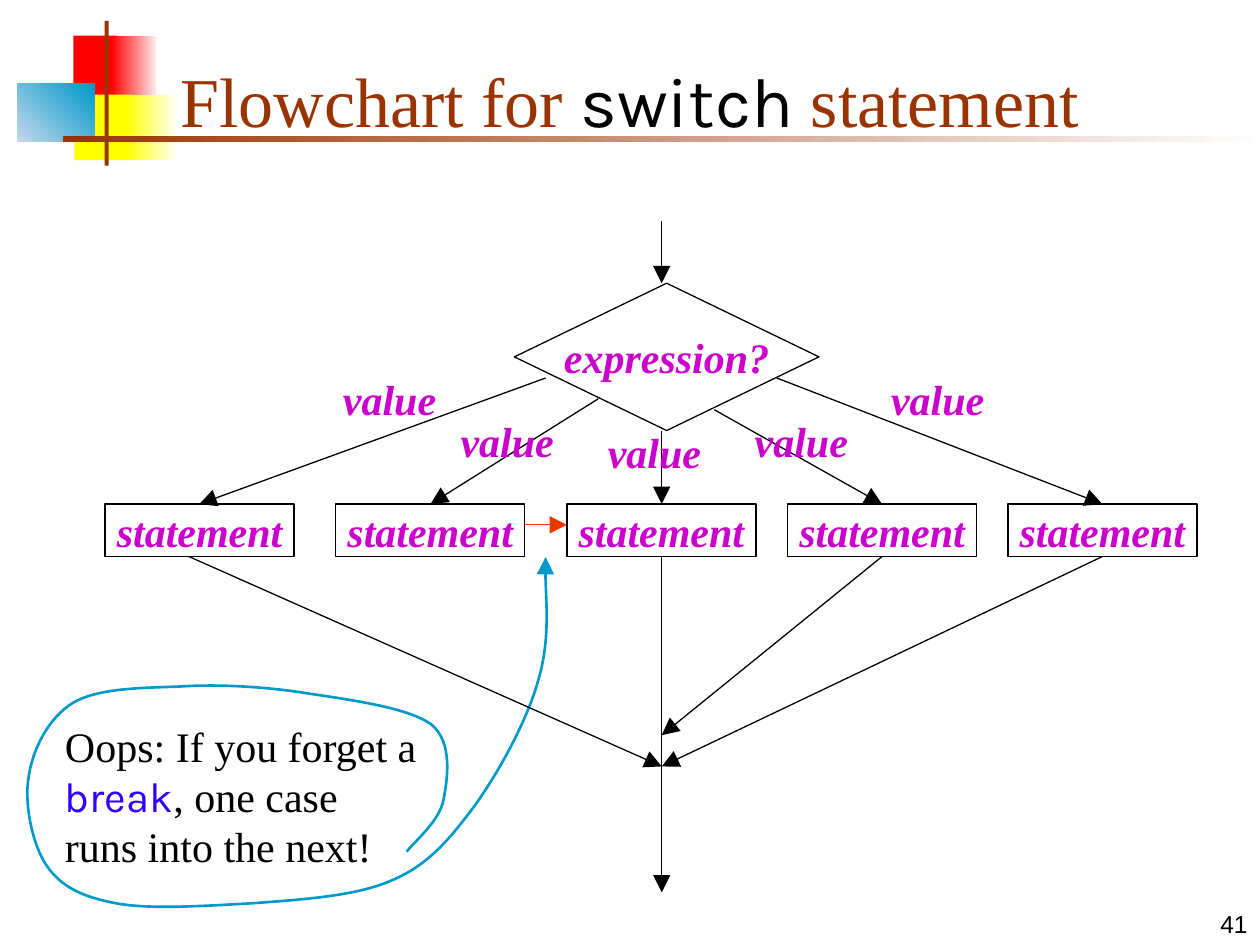
import dataclasses

import lxml.etree
import pptx
import pptx.dml.color
import pptx.enum.shapes
import pptx.enum.text
import pptx.oxml.ns
import pptx.util

Cm = pptx.util.Cm
Pt = pptx.util.Pt
RGB = pptx.dml.color.RGBColor.from_string
SHAPE = pptx.enum.shapes.MSO_SHAPE
ALIGN = pptx.enum.text.PP_ALIGN
ANCHOR = pptx.enum.text.MSO_ANCHOR
qn = pptx.oxml.ns.qn


@dataclasses.dataclass(frozen=True)
class Theme:
    black: str = "000000"
    brown: str = "993300"
    magenta: str = "CC00CC"
    keyword: str = "3300FF"
    callout: str = "0099CC"
    fall_through: str = "FF3300"
    red: str = "FF0000"
    pale_red: str = "FFEAEA"
    yellow: str = "FFFF00"
    pale_yellow: str = "FFFFF8"
    pale_blue: str = "C4D8EA"
    white: str = "FFFFFF"
    serif: str = "Times New Roman"
    code: str = "Karla"
    sans: str = "Arial"
    title_size: int = 40
    body_size: int = 24
    number_size: int = 14
    thin: float = 0.75
    thick: float = 1.5


theme = Theme()


def write(frame, text, *, size=theme.body_size, color=theme.black, font=theme.serif,
          emphasis=False, align=ALIGN.LEFT, anchor=ANCHOR.TOP, wrap=True):
    """Append a formatted run to the first paragraph of a text frame."""
    frame.word_wrap = wrap
    frame.vertical_anchor = anchor
    paragraph = frame.paragraphs[0]
    paragraph.alignment = align
    run = paragraph.add_run()
    run.text = text
    run.font.name = font
    run.font.size = Pt(size)
    run.font.bold = run.font.italic = emphasis
    run.font.color.rgb = RGB(color)


def style_arrow(arrow, color, width):
    """Set the stroke, end it with a large triangle and remove the shadow."""
    arrow.line.color.rgb = RGB(color)
    arrow.line.width = Pt(width)
    properties = arrow.element.spPr
    stroke = properties.find(qn("a:ln"))
    lxml.etree.SubElement(stroke, qn("a:tailEnd"), type="triangle", w="lg", len="lg")
    if properties.find(qn("a:effectLst")) is None:
        lxml.etree.SubElement(properties, qn("a:effectLst"))


deck = pptx.Presentation()
deck.slide_width, deck.slide_height = Cm(25.4), Cm(19.05)
slide = deck.slides.add_slide(deck.slide_layouts[6])
shapes = slide.shapes

# Corner ornament and title rule: left, top, width, height, colours, angle
ornament = [
    (1.48, 0.72, 0.89, 1.32, [theme.red], 0),
    (2.24, 0.72, 0.91, 1.32, [theme.red, theme.pale_red], 0),
    (1.5, 1.91, 1.17, 1.32, [theme.yellow], 0),
    (2.54, 1.91, 1.02, 1.32, [theme.yellow, theme.pale_yellow], 0),
    (0.35, 1.69, 1.55, 1.17, [theme.pale_blue, theme.callout], 45),
    (2.11, 0.42, 0.08, 2.92, [theme.brown], 0),
    (1.27, 2.74, 24.13, 0.13, [theme.brown, theme.white], 0),
]
for left, top, width, height, colors, angle in ornament:
    block = shapes.add_shape(SHAPE.RECTANGLE, Cm(left), Cm(top), Cm(width), Cm(height))
    block.shadow.inherit = False
    block.line.fill.background()
    if len(colors) == 1:
        block.fill.solid()
        block.fill.fore_color.rgb = RGB(colors[0])
    else:
        block.fill.gradient()
        block.fill.gradient_angle = angle
        for stop, color in zip(block.fill.gradient_stops, colors):
            stop.color.rgb = RGB(color)

# Slide number
number = shapes.add_textbox(Cm(20.12), Cm(17.78), Cm(5.28), Cm(1.27)).text_frame
write(number, "41", size=theme.number_size, font=theme.sans,
      align=ALIGN.RIGHT, anchor=ANCHOR.BOTTOM)

# Title
title = shapes.add_textbox(Cm(3.39), Cm(0.64), Cm(21.64), Cm(2.33)).text_frame
for text, color, font in [("Flowchart for ", theme.brown, theme.serif),
                          ("switch", theme.black, theme.code),
                          (" statement", theme.brown, theme.serif)]:
    write(title, text, size=theme.title_size, color=color, font=font, anchor=ANCHOR.BOTTOM)

# Warning about the missing break
warning = shapes.add_textbox(Cm(1.06), Cm(14.39), Cm(7.62), Cm(3.3)).text_frame
write(warning, "Oops: If you forget a ")
write(warning, "break", color=theme.keyword, font=theme.code)
write(warning, ", one case runs into the next!")

# Loop around the warning, up to the fall-through arrow: two handles and an end per row
loop_start = (8.2, 17.17)
loop_points = [
    (8.33, 16.99), (8.86, 16.56), (8.94, 16.13),
    (9.02, 15.72), (9.14, 14.96), (8.69, 14.6),
    (8.2, 14.25), (6.98, 14.1), (6.15, 13.97),
    (5.31, 13.84), (4.39, 13.79), (3.63, 13.84),
    (2.84, 13.87), (1.98, 13.87), (1.47, 14.17),
    (0.97, 14.48), (0.66, 15.11), (0.58, 15.65),
    (0.48, 16.21), (0.66, 17.04), (0.94, 17.45),
    (1.24, 17.88), (1.65, 18.08), (2.34, 18.21),
    (3.02, 18.34), (4.17, 18.26), (5.08, 18.21),
    (5.99, 18.14), (7.09, 18.08), (7.82, 17.78),
    (8.59, 17.48), (9.02, 16.97), (9.52, 16.31),
    (10.03, 15.62), (10.62, 14.55), (10.85, 13.72),
    (11.1, 12.88), (10.97, 11.73), (11, 11.23),
]
outline = shapes.build_freeform(Cm(loop_start[0]), Cm(loop_start[1]))
outline.add_line_segments([(Cm(x), Cm(y)) for x, y in loop_points], close=False)
loop = outline.convert_to_shape()
# Join every three points into one Bézier curve
straights = list(loop.element.iter(qn("a:lnTo")))
for first in range(0, len(straights), 3):
    curve = lxml.etree.Element(qn("a:cubicBezTo"))
    straights[first].addprevious(curve)
    for straight in straights[first:first + 3]:
        curve.append(straight[0])
        straight.getparent().remove(straight)
loop.shadow.inherit = False
loop.fill.background()
style_arrow(loop, theme.callout, theme.thick)

# Decision and its five statements
BOX_TOP, BOX_WIDTH, BOX_HEIGHT = 10.16, 3.81, 1.06
BOX_BOTTOM = BOX_TOP + BOX_HEIGHT
nodes = [(SHAPE.FLOWCHART_DECISION, "expression?", 10.37, 5.71, 6.14, 2.97)]
nodes += [(SHAPE.FLOWCHART_PROCESS, "statement", left, BOX_TOP, BOX_WIDTH, BOX_HEIGHT)
          for left in (2.12, 6.77, 11.43, 15.88, 20.32)]
for kind, text, left, top, width, height in nodes:
    node = shapes.add_shape(kind, Cm(left), Cm(top), Cm(width), Cm(height))
    node.shadow.inherit = False
    node.fill.background()
    node.line.color.rgb = RGB(theme.black)
    node.line.width = Pt(theme.thin)
    write(node.text_frame, text, color=theme.magenta, emphasis=True,
          align=ALIGN.CENTER, anchor=ANCHOR.MIDDLE, wrap=False)

# Arrows: into the decision, out to the statements, on to the exit
AXIS, JOIN = 13.34, 15.45
flows = [
    (AXIS, 4.45, AXIS, 5.71, theme.black),
    (11, 7.62, 4.02, BOX_TOP, theme.black),
    (12.06, 8.04, 8.68, BOX_TOP, theme.black),
    (AXIS, 8.68, AXIS, BOX_TOP, theme.black),
    (14.4, 8.26, 17.78, BOX_TOP, theme.black),
    (15.66, 7.62, 22.22, BOX_TOP, theme.black),
    (3.81, BOX_BOTTOM, AXIS, JOIN, theme.black),
    (AXIS, BOX_BOTTOM, AXIS, 17.99, theme.black),
    (17.78, BOX_BOTTOM, AXIS, 14.82, theme.black),
    (22.22, BOX_BOTTOM, AXIS, JOIN, theme.black),
    (10.58, 10.58, 11.43, 10.58, theme.fall_through),
]
for x1, y1, x2, y2, color in flows:
    flow = shapes.add_connector(pptx.enum.shapes.MSO_CONNECTOR.STRAIGHT,
                                Cm(x1), Cm(y1), Cm(x2), Cm(y2))
    style_arrow(flow, color, theme.thin)

# Value labels on the branches
for left, top in [(6.56, 7.41), (8.93, 8.26), (11.9, 8.47), (14.86, 8.26), (17.61, 7.41)]:
    value = shapes.add_textbox(Cm(left), Cm(top), Cm(2.59), Cm(1.27)).text_frame
    write(value, "value", color=theme.magenta, emphasis=True, align=ALIGN.CENTER)

deck.save("out.pptx")
